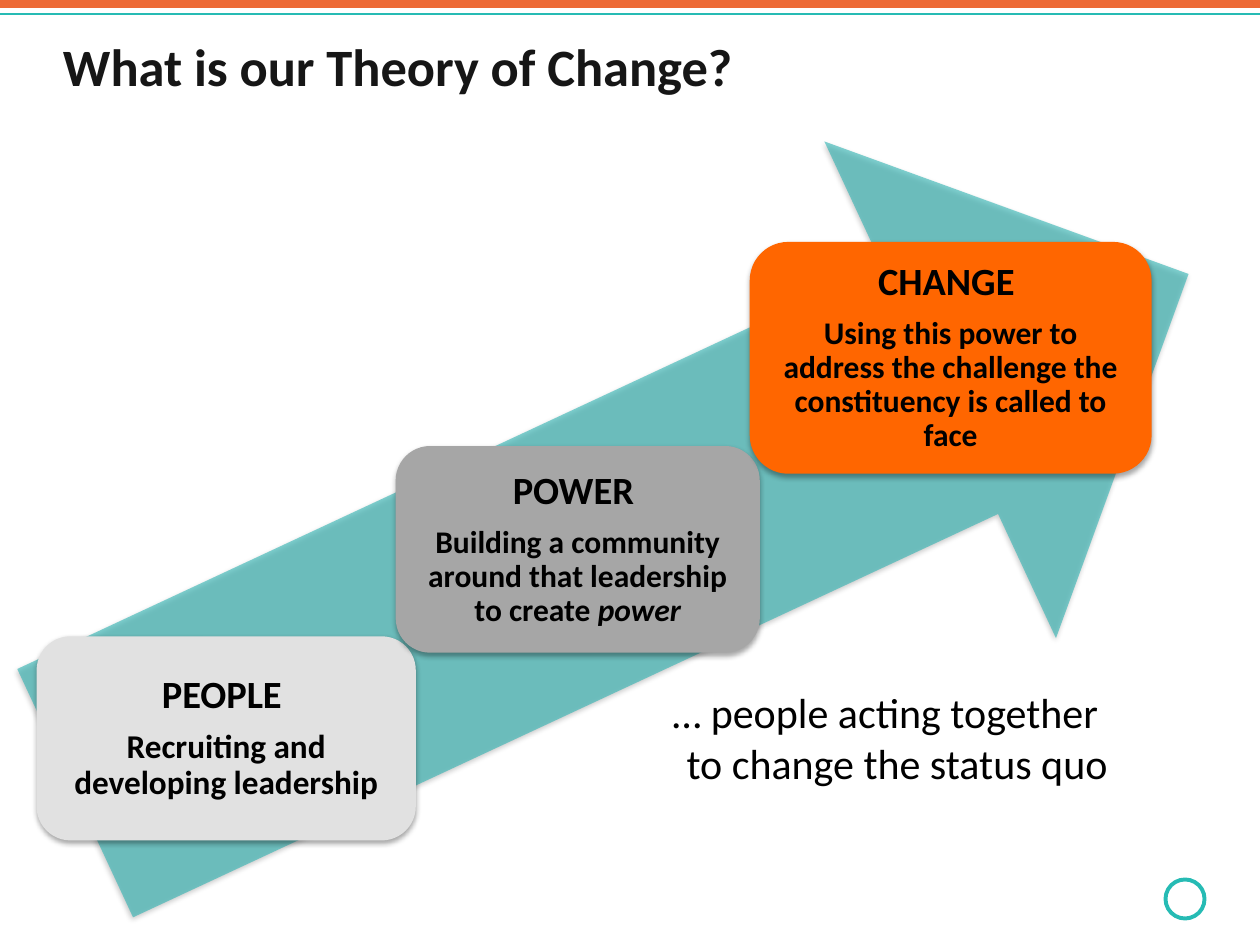
from lxml import etree
from pptx import Presentation
from pptx.dml.color import RGBColor
from pptx.enum.shapes import MSO_CONNECTOR, MSO_SHAPE
from pptx.enum.text import MSO_ANCHOR, PP_ALIGN
from pptx.oxml import parse_xml
from pptx.oxml.ns import nsdecls, qn
from pptx.util import Inches, Pt

COLORS = {
    "teal": "26BBB4", "orange_rule": "ED6A36", "arrow": "2DB3B2",
    "people": "E1E1E1", "power": "A6A6A6", "change": "FF6600",
    "title": "161616", "black": "000000",
}

deck = Presentation()
deck.slide_width, deck.slide_height = Inches(10), Inches(7.5)
COLUMN, ROW = deck.slide_width / 100, deck.slide_height / 75
slide = deck.slides.add_slide(deck.slide_layouts[6])
shapes = slide.shapes


def place(left, top, width, height):
    return [round(left * COLUMN), round(top * ROW), round(width * COLUMN), round(height * ROW)]


def write(frame, paragraphs, frame_format, paragraph_format, color):
    for name, value in {"word_wrap": True, **frame_format}.items():
        setattr(frame, name, value)
    for index, runs in enumerate(paragraphs):
        paragraph = frame.paragraphs[0] if index == 0 else frame.add_paragraph()
        for name, value in paragraph_format.items():
            setattr(paragraph, name, value)
        for words, size, bold, italic in runs:
            run = paragraph.add_run()
            run.text = words
            font_format = {"name": "Calibri", "size": Pt(size), "bold": bold, "italic": italic}
            for name, value in font_format.items():
                setattr(run.font, name, value)
            run.font.color.rgb = RGBColor.from_string(COLORS[color])


for level, color, weight in [(1.1, "teal", 1), (0.3, "orange_rule", 4.5)]:
    rule = shapes.add_connector(MSO_CONNECTOR.STRAIGHT, 0, round(level * ROW),
                                deck.slide_width, round(level * ROW))
    rule.line.color.rgb = RGBColor.from_string(COLORS[color])
    rule.line.width = Pt(weight)
    etree.SubElement(rule._element.spPr, qn("a:effectLst"))

ring = shapes.add_shape(MSO_SHAPE.OVAL, *place(92.5, 69.8, 3.1, 3.1))
ring.shadow.inherit = False
ring.fill.background()
ring.line.color.rgb = RGBColor.from_string(COLORS["teal"])
ring.line.width = Pt(2.25)

arrow = shapes.add_shape(MSO_SHAPE.RIGHT_ARROW, *place(1.4, 20.6, 97.5, 43.5))
arrow.rotation = 335

steps = [
    ("people", (2.9, 50.5, 30.1, 16.2),
     [[("PEOPLE ", 22, True, False)],
      [("Recruiting and developing leadership", 19, True, False)]]),
    ("power", (31.4, 35.4, 28.9, 16.4),
     [[("POWER ", 22, True, False)],
      [("Building a community around that leadership to create ", 18, True, False),
       ("power", 18, True, True)]]),
    ("change", (59.5, 19.2, 31.9, 18.4),
     [[("CHANGE ", 22, True, False)],
      [("Using this power to address the challenge the constituency is called to face",
        18, True, False)]]),
]
card_frame = {"vertical_anchor": MSO_ANCHOR.MIDDLE, **dict.fromkeys(
    ["margin_left", "margin_top", "margin_right", "margin_bottom"], Inches(0.09))}
card_paragraph = {"alignment": PP_ALIGN.CENTER, "line_spacing": 0.9, "space_after": Pt(7.7)}

shadowed = [(arrow, "arrow")]
for step, area, paragraphs in steps:
    card = shapes.add_shape(MSO_SHAPE.ROUNDED_RECTANGLE, *place(*area))
    write(card.text_frame, paragraphs, card_frame, card_paragraph, "black")
    shadowed.append((card, step))

for shape, color in shadowed:
    shape.fill.solid()
    shape.fill.fore_color.rgb = RGBColor.from_string(COLORS[color])
    shape.line.fill.background()
    shape.shadow.inherit = False
    shape._element.spPr.find(qn("a:effectLst")).append(parse_xml(
        f'<a:outerShdw {nsdecls("a")} blurRad="{Pt(3.1)}" dist="{Pt(1.8)}" dir="5400000" '
        f'rotWithShape="0"><a:srgbClr val="{COLORS["black"]}"><a:alpha val="35000"/>'
        '</a:srgbClr></a:outerShdw>'))

arrow_tint = arrow._element.spPr.find(qn("a:solidFill"))[0]
etree.SubElement(arrow_tint, qn("a:alpha"), val="60000")

summary = shapes.add_textbox(*place(47.3, 54, 41.6, 9.1))
write(summary.text_frame,
      [[("… people acting together ", 24, False, False)],
       [("to change the status quo", 24, False, False)]],
      {}, {"alignment": PP_ALIGN.RIGHT}, "black")

title = shapes.add_textbox(*place(5, 2.7, 90, 5))
title_frame = {"vertical_anchor": MSO_ANCHOR.MIDDLE, **dict.fromkeys(
    ["margin_left", "margin_top", "margin_right", "margin_bottom"], 0)}
write(title.text_frame, [[("What is our Theory of Change?", 30, True, False)]],
      title_frame, {"alignment": PP_ALIGN.LEFT}, "title")

deck.save("out.pptx")
